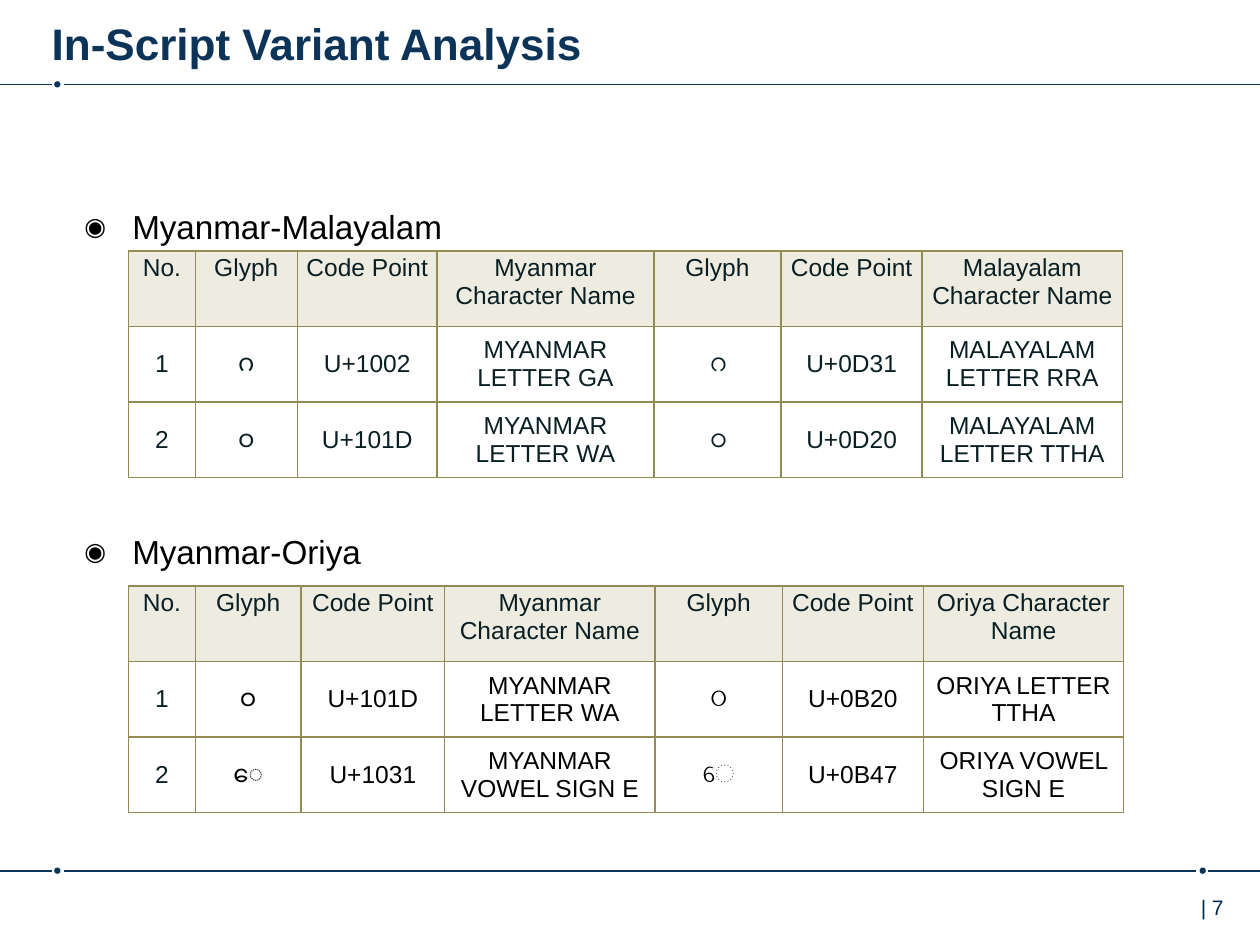
from lxml import etree
from pptx import Presentation
from pptx.dml.color import RGBColor
from pptx.enum import shapes, text
from pptx.oxml import parse_xml
from pptx.oxml.ns import nsdecls, qn
from pptx.util import Inches, Pt

NAVY = RGBColor(0x0C, 0x34, 0x58)
FOOTER_BLUE = RGBColor(0x00, 0x2B, 0x49)
INK = RGBColor(0x0A, 0x1F, 0x24)
BLACK = RGBColor(0, 0, 0)
SAND = RGBColor(0xEE, 0xEC, 0xE1)
OLIVE = RGBColor(0x94, 0x8A, 0x54)
FONT = "Arial"

SECTIONS = [
    {
        "heading": "Myanmar-Malayalam", "heading_top": 1.61, "table_top": 1.99,
        "columns": [0.53, 0.81, 1.11, 1.72, 1.01, 1.12, 1.59],
        "variant_color": INK,
        "rows": [
            ("No.", "Glyph", "Code Point", "Myanmar Character Name",
             "Glyph", "Code Point", "Malayalam Character Name"),
            ("1", "ဂ", "U+1002", "MYANMAR LETTER GA",
             "റ", "U+0D31", "MALAYALAM LETTER RRA"),
            ("2", "ဝ", "U+101D", "MYANMAR LETTER WA",
             "ഠ", "U+0D20", "MALAYALAM LETTER TTHA"),
        ],
    },
    {
        "heading": "Myanmar-Oriya", "heading_top": 4.19, "table_top": 4.65,
        "columns": [0.53, 0.84, 1.14, 1.67, 1.01, 1.12, 1.59],
        "variant_color": BLACK,
        "rows": [
            ("No.", "Glyph", "Code Point", "Myanmar Character Name",
             "Glyph", "Code Point", "Oriya Character Name"),
            ("1", "ဝ", "U+101D", "MYANMAR LETTER WA",
             "ଠ", "U+0B20", "ORIYA LETTER TTHA"),
            ("2", "ေ", "U+1031", "MYANMAR VOWEL SIGN E",
             "େ", "U+0B47", "ORIYA VOWEL SIGN E"),
        ],
    },
]
# Each rule: height, horizontal segments, left edges of its dots
RULES = [
    (0.67, [(0.41, 0), (10, 0.51)], [0.43]),
    (6.91, [(0.41, 0), (9.49, 0.51), (9.59, 10)], [0.43, 9.52]),
]
DOT = 0.05
TABLE_LEFT = 1.02
ROW_HEIGHT = 0.6
CELL_MARGIN = Inches(0.03)


def add_span(para, words, size, color, bold=False):
    span = para.add_run()
    span.text = words
    span.font.name = FONT
    span.font.size = Pt(size)
    span.font.bold = bold
    span.font.color.rgb = color


def add_text(page, place, inset, words, size, color, bold=False):
    """Add a one-line text box; inset is its left and top margin."""
    box = page.shapes.add_textbox(*map(Inches, place))
    frame = box.text_frame
    frame.word_wrap = True
    frame.margin_left, frame.margin_top = map(Inches, inset)
    frame.margin_right = frame.margin_bottom = 0
    para = frame.paragraphs[0]
    add_span(para, words, size, color, bold)
    return para


def add_bullet(para):
    props = para._p.get_or_add_pPr()
    props.set("marL", str(Inches(0.38)))
    props.set("indent", str(-Inches(0.38)))
    color = etree.SubElement(props, qn("a:buClr"))
    etree.SubElement(color, qn("a:srgbClr"), val=str(BLACK))
    etree.SubElement(props, qn("a:buSzPct"), val="75000")
    etree.SubElement(props, qn("a:buFont"), typeface=FONT)
    etree.SubElement(props, qn("a:buChar"), char="◉")


def add_rule(page, y, segments, dots):
    for start, end in segments:
        line = page.shapes.add_connector(
            shapes.MSO_CONNECTOR.STRAIGHT,
            Inches(start), Inches(y), Inches(end), Inches(y))
        line.line.color.rgb = NAVY
        line.line.width = Pt(1)
        etree.SubElement(line._element.spPr, qn("a:effectLst"))
    for left in dots:
        dot = page.shapes.add_shape(
            shapes.MSO_SHAPE.OVAL, Inches(left), Inches(y - DOT / 2),
            Inches(DOT), Inches(DOT))
        dot.shadow.inherit = False
        dot.fill.solid()
        dot.fill.fore_color.rgb = NAVY
        dot.line.fill.background()


def add_borders(cell):
    props = cell._tc.get_or_add_tcPr()
    for index, side in enumerate(("lnL", "lnR", "lnT", "lnB")):
        props.insert(index, parse_xml(
            f'<a:{side} {nsdecls("a")} w="{Pt(1)}"><a:solidFill>'
            f'<a:srgbClr val="{OLIVE}"/></a:solidFill></a:{side}>'))


def add_variant_table(page, section):
    rows, columns = section["rows"], section["columns"]
    table = page.shapes.add_table(
        len(rows), len(columns), Inches(TABLE_LEFT), Inches(section["table_top"]),
        Inches(sum(columns)), Inches(ROW_HEIGHT * len(rows))).table
    table.first_row = table.horz_banding = False
    for column, width in zip(table.columns, columns):
        column.width = Inches(width)
    for r, row in enumerate(rows):
        table.rows[r].height = Inches(ROW_HEIGHT)
        for c, words in enumerate(row):
            cell = table.cell(r, c)
            cell.margin_left = cell.margin_right = CELL_MARGIN
            cell.margin_top = cell.margin_bottom = CELL_MARGIN
            if r == 0:
                cell.fill.solid()
                cell.fill.fore_color.rgb = SAND
            else:
                cell.fill.background()
                cell.vertical_anchor = text.MSO_ANCHOR.MIDDLE
            add_borders(cell)
            para = cell.text_frame.paragraphs[0]
            para.alignment = text.PP_ALIGN.CENTER
            color = section["variant_color"] if r and c else INK
            add_span(para, words, 14, color)


def main():
    deck = Presentation()
    deck.slide_width, deck.slide_height = Inches(10), Inches(7.5)
    page = deck.slides.add_slide(deck.slide_layouts[6])
    for rule in RULES:
        add_rule(page, *rule)
    add_text(page, (9.29, 7.05, 0.87, 0.4), (0.24, 0.05), "| 7", 12, FOOTER_BLUE)
    add_text(page, (0.41, 0.05, 8.76, 0.49), (0, 0.08),
             "In-Script Variant Analysis", 25.2, NAVY, bold=True)
    for section in SECTIONS:
        heading = add_text(page, (0.67, section["heading_top"], 8.65, 0.73),
                           (0, 0.03), section["heading"], 19, BLACK)
        add_bullet(heading)
        add_variant_table(page, section)
    deck.save("out.pptx")


if __name__ == "__main__":
    main()
